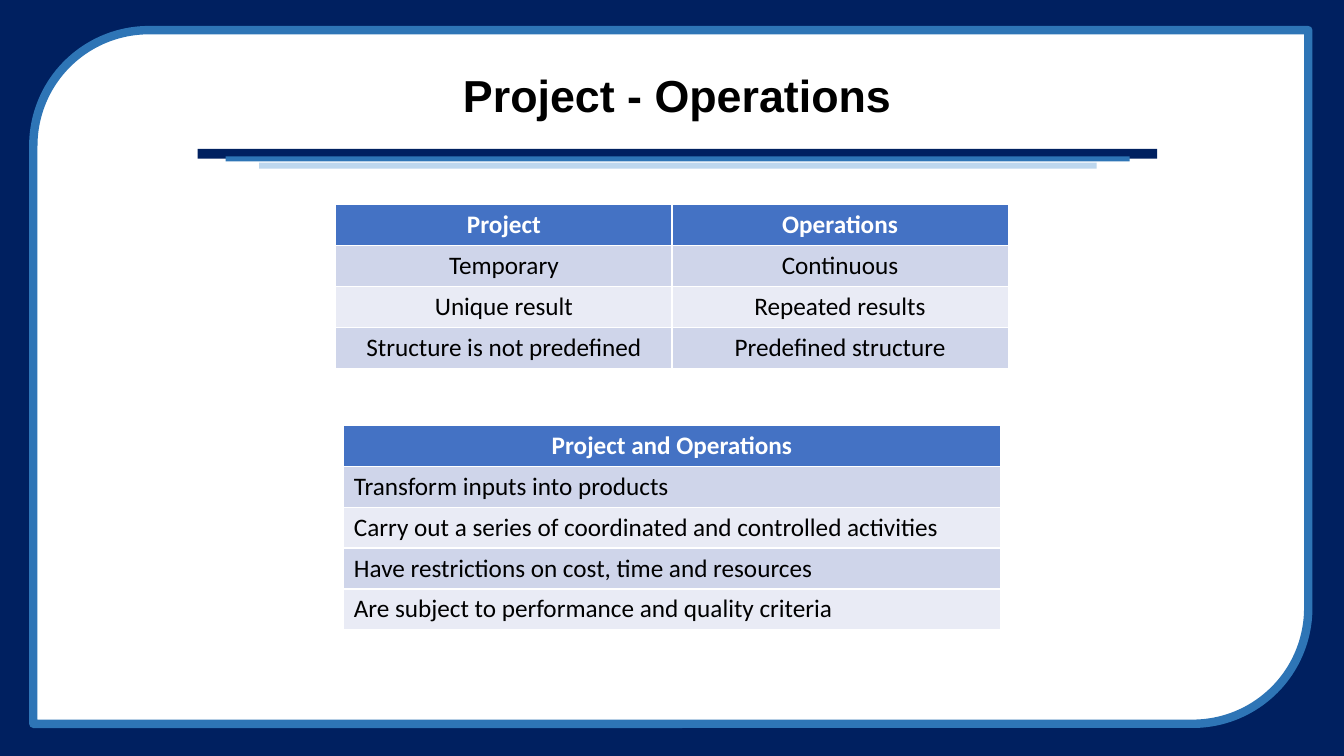
import pptx
import pptx.dml.color
import pptx.enum.shapes
import pptx.enum.text
import pptx.util

Cm, Pt = pptx.util.Cm, pptx.util.Pt
RGBColor = pptx.dml.color.RGBColor
SHAPE = pptx.enum.shapes.MSO_SHAPE
ALIGN = pptx.enum.text.PP_ALIGN

NAVY = RGBColor(0x00, 0x20, 0x60)
BLUE = RGBColor(0x2E, 0x75, 0xB6)
PALE = RGBColor(0xBD, 0xD7, 0xEE)
WHITE = RGBColor(0xFF, 0xFF, 0xFF)
BLACK = RGBColor(0x00, 0x00, 0x00)
HEAD = RGBColor(0x44, 0x72, 0xC4)
BANDS = [RGBColor(0xCF, 0xD5, 0xEA), RGBColor(0xE9, 0xEB, 0xF5)]

TITLE = "Project - Operations"
DIFFERENT = [
    ("Project", "Operations"),
    ("Temporary", "Continuous"),
    ("Unique result", "Repeated results"),
    ("Structure is not predefined", "Predefined structure"),
]
SHARED = [
    ("Project and Operations",),
    ("Transform inputs into products",),
    ("Carry out a series of coordinated and controlled activities",),
    ("Have restrictions on cost, time and resources",),
    ("Are subject to performance and quality criteria",),
]
# left, top, width, height in cm, colour
BARS = [
    (4.98, 3.75, 24.18, 0.25, NAVY),
    (5.69, 3.94, 22.78, 0.13, BLUE),
    (6.53, 4.1, 21.11, 0.15, PALE),
]
WIDE, HIGH = 33.87, 19.05
ROW = 1.03


def block(slide, kind, left, top, width, height, fill):
    shape = slide.shapes.add_shape(kind, Cm(left), Cm(top), Cm(width), Cm(height))
    shape.shadow.inherit = False
    shape.fill.solid()
    shape.fill.fore_color.rgb = fill
    shape.line.fill.background()
    return shape


def style(para, size, name, color, bold):
    for run in para.runs:
        font = run.font
        font.size, font.name, font.bold = Pt(size), name, bold
        font.color.rgb = color


def grid(slide, rows, top, width, align):
    """Add a table centred on the slide, with a header row and banded body."""
    count = len(rows[0])
    left = (WIDE - width) / 2
    table = slide.shapes.add_table(
        len(rows), count, Cm(left), Cm(top), Cm(width), Cm(ROW * len(rows))
    ).table
    for col in table.columns:
        col.width = Cm(width / count)
    for r, words in enumerate(rows):
        table.rows[r].height = Cm(ROW)
        for c, text in enumerate(words):
            cell = table.cell(r, c)
            cell.text_frame.text = text
            cell.fill.solid()
            cell.fill.fore_color.rgb = BANDS[(r - 1) % 2] if r else HEAD
            para = cell.text_frame.paragraphs[0]
            para.alignment = align if r else ALIGN.CENTER
            style(para, 18, "Calibri", BLACK if r else WHITE, r == 0)


def main():
    deck = pptx.Presentation()
    deck.slide_width, deck.slide_height = Cm(WIDE), Cm(HIGH)
    slide = deck.slides.add_slide(deck.slide_layouts[5])

    block(slide, SHAPE.RECTANGLE, 0, 0, WIDE, HIGH, NAVY)
    panel = block(slide, SHAPE.ROUND_2_DIAG_RECTANGLE, 0.84, 0.76, 32.13, 17.48, WHITE)
    panel.line.color.rgb = BLUE
    panel.line.width = Pt(6)
    for *box, color in BARS:
        block(slide, SHAPE.RECTANGLE, *box, color)

    title = slide.shapes.title
    slide.shapes.element.append(title.element)  # bring in front of the panel
    title.left, title.top = Cm(4.98), Cm(1.24)
    title.width, title.height = Cm(24.18), Cm(2.46)
    frame = title.text_frame
    frame.text = TITLE
    frame.vertical_anchor = pptx.enum.text.MSO_ANCHOR.MIDDLE
    para = frame.paragraphs[0]
    para.alignment = ALIGN.CENTER
    para.line_spacing = 0.9
    style(para, 32, "Arial", BLACK, True)

    grid(slide, DIFFERENT, 5.16, 16.94, ALIGN.CENTER)
    grid(slide, SHARED, 10.72, 16.54, ALIGN.LEFT)
    deck.save("out.pptx")


if __name__ == "__main__":
    main()
